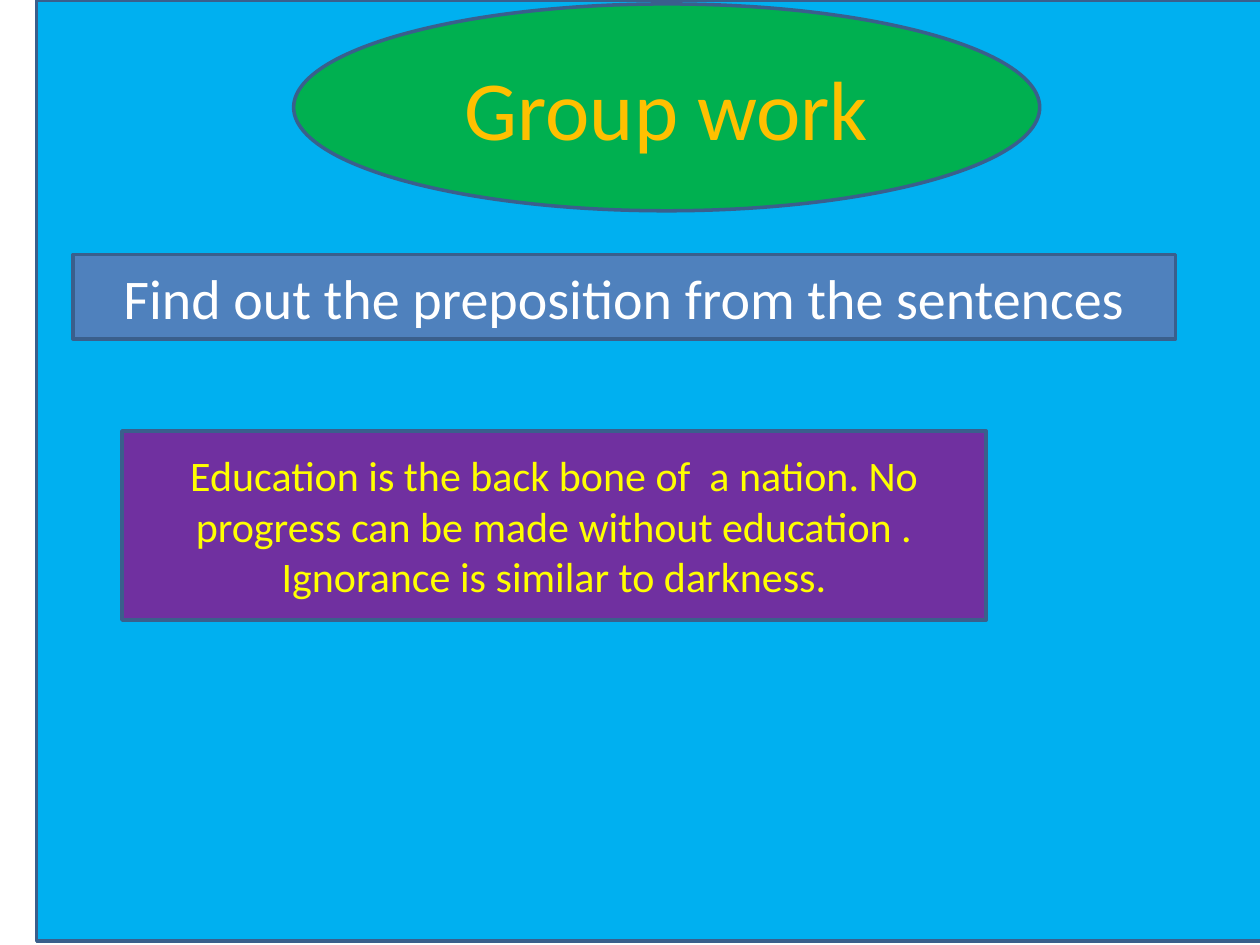
import pptx
import pptx.util
import pptx.dml.color
import pptx.enum.shapes
import pptx.enum.text

Cm = pptx.util.Cm
Pt = pptx.util.Pt
RGBColor = pptx.dml.color.RGBColor
SHAPE = pptx.enum.shapes.MSO_SHAPE

SKY = RGBColor(0x00, 0xB0, 0xF0)
GREEN = RGBColor(0x00, 0xB0, 0x50)
BLUE = RGBColor(0x4F, 0x81, 0xBD)
PURPLE = RGBColor(0x70, 0x30, 0xA0)
OUTLINE = RGBColor(0x3A, 0x5F, 0x8C)
GOLD = RGBColor(0xFF, 0xC0, 0x00)
WHITE = RGBColor(0xFF, 0xFF, 0xFF)
YELLOW = RGBColor(0xFF, 0xFF, 0x00)

PANELS = [
    {"outline": SHAPE.FLOWCHART_PROCESS, "box": (0.74, 0, 25.4, 18.97), "fill": SKY},
    {"outline": SHAPE.OVAL, "box": (5.92, 0.08, 15.04, 4.17), "fill": GREEN,
     "text": "Group work", "size": 48, "color": GOLD},
    {"outline": SHAPE.FLOWCHART_PROCESS, "box": (1.47, 5.13, 22.23, 1.7), "fill": BLUE,
     "text": "Find out the preposition from the sentences", "size": 32, "color": WHITE},
    {"outline": SHAPE.FLOWCHART_PROCESS, "box": (2.46, 8.69, 17.42, 3.81), "fill": PURPLE,
     "text": "Education is the back bone of  a nation. No progress can be made "
             "without education . Ignorance is similar to darkness.",
     "size": 24, "color": YELLOW},
]


def write_text(frame, panel):
    frame.word_wrap = True
    frame.vertical_anchor = pptx.enum.text.MSO_ANCHOR.MIDDLE
    paragraph = frame.paragraphs[0]
    paragraph.alignment = pptx.enum.text.PP_ALIGN.CENTER
    wording = paragraph.add_run()
    wording.text = panel["text"]
    for attribute, value in {"name": "Calibri", "size": Pt(panel["size"])}.items():
        setattr(wording.font, attribute, value)
    wording.font.color.rgb = panel["color"]


def add_panel(slide, panel):
    shape = slide.shapes.add_shape(panel["outline"], *map(Cm, panel["box"]))
    shape.shadow.inherit = False
    shape.fill.solid()
    shape.fill.fore_color.rgb = panel["fill"]
    shape.line.color.rgb = OUTLINE
    shape.line.width = Pt(2)
    if "text" in panel:
        write_text(shape.text_frame, panel)


def main():
    deck = pptx.Presentation()
    for attribute, length in {"slide_width": 25.4, "slide_height": 19.05}.items():
        setattr(deck, attribute, Cm(length))
    slide = deck.slides.add_slide(deck.slide_layouts[6])
    for panel in PANELS:
        add_panel(slide, panel)
    deck.save("out.pptx")


if __name__ == "__main__":
    main()
